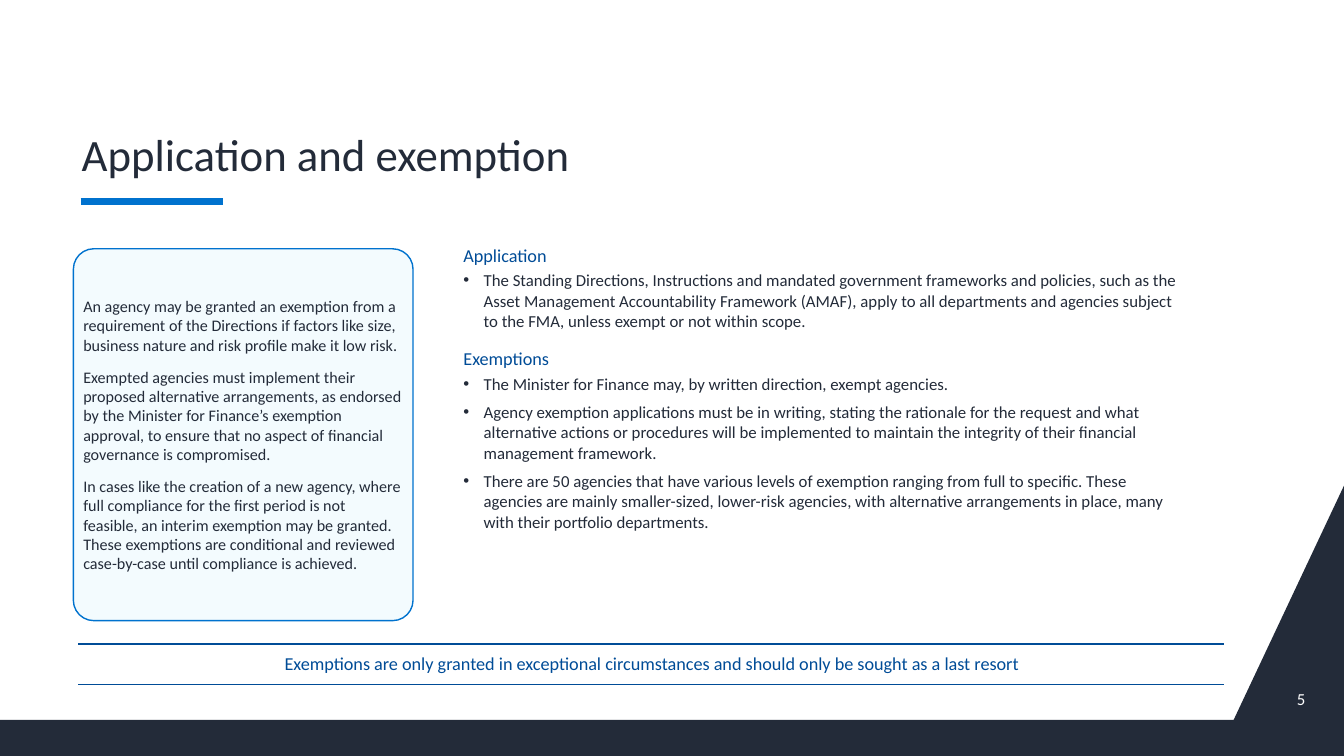
import pptx
import pptx.util
import pptx.dml.color
import pptx.enum.shapes
import pptx.enum.text
import pptx.oxml
import pptx.oxml.ns
from dataclasses import dataclass

Cm, Pt = pptx.util.Cm, pptx.util.Pt
ALIGN = pptx.enum.text.PP_ALIGN
ANCHOR = pptx.enum.text.MSO_ANCHOR

TITLE = "Application and exemption"
CARD = [
    "An agency may be granted an exemption from a requirement of the Directions if factors like size, "
    "business nature and risk profile make it low risk.",
    "Exempted agencies must implement their proposed alternative arrangements, as endorsed by the Minister "
    "for Finance’s exemption approval, to ensure that no aspect of financial governance is compromised.",
    "In cases like the creation of a new agency, where full compliance for the first period is not feasible, "
    "an interim exemption may be granted. These exemptions are conditional and reviewed case-by-case until "
    "compliance is achieved.",
]
SECTIONS = {
    "Application": [
        "The Standing Directions, Instructions and mandated government frameworks and policies, such as the "
        "Asset Management Accountability Framework (AMAF), apply to all departments and agencies subject to "
        "the FMA, unless exempt or not within scope.",
    ],
    "Exemptions": [
        "The Minister for Finance may, by written direction, exempt agencies.",
        "Agency exemption applications must be in writing, stating the rationale for the request and what "
        "alternative actions or procedures will be implemented to maintain the integrity of their financial "
        "management framework.",
        "There are 50 agencies that have various levels of exemption ranging from full to specific. These "
        "agencies are mainly smaller-sized, lower-risk agencies, with alternative arrangements in place, many "
        "with their portfolio departments.",
    ],
}
BANNER = "Exemptions are only granted in exceptional circumstances and should only be sought as a last resort"
PAGE_NUMBER = "5"

# Left, top, width, height in centimetres
TITLE_AT = (1.96, 1.83, 29.21, 2.87)
CARD_AT = (1.85, 6.27, 8.56, 9.37)
BODY_AT = (11.58, 6.02, 18.19, 11.12)
BANNER_AT = (1.96, 16.23, 28.91, 1.02)
NUMBER_AT = (31.93, 17.09, 1.22, 1.02)
RULE = (2.03, 5.08, 5.61, 5.08)
FOOTER = [(31.09, 18.14), (0, 18.14), (0, 19.05), (33.87, 19.05), (33.87, 12.24)]
HANG = 0.51


@dataclass(frozen=True)
class Theme:
    font: str = "Calibri"
    ink: str = "232B39"
    navy: str = "004C97"
    blue: str = "0072CE"
    pale: str = "F3FBFE"
    white: str = "FFFFFF"
    title: float = 32
    heading: float = 13
    body: float = 12
    card: float = 11.5


THEME = Theme()


def rgb(value):
    return pptx.dml.color.RGBColor.from_string(value)


def lengths(values):
    return [Cm(value) for value in values]


def paint(target, color):
    target.fill.solid()
    target.fill.fore_color.rgb = rgb(color)


def write(para, text, size, color, align=ALIGN.LEFT, before=0, after=0):
    para.text = text
    para.alignment = align
    para.space_before, para.space_after = Pt(before), Pt(after)
    font = para.runs[0].font
    font.name, font.size, font.color.rgb = THEME.font, Pt(size), rgb(color)


def paragraphs(frame):
    """Yield the first paragraph of a text frame, then new ones."""
    yield frame.paragraphs[0]
    while True:
        yield frame.add_paragraph()


def set_frame(frame, anchor, side=0.1, end=0.13):
    frame.word_wrap = True
    frame.vertical_anchor = anchor
    frame.margin_left = frame.margin_right = Cm(side)
    frame.margin_top = frame.margin_bottom = Cm(end)
    return frame


def add_text_box(page, place, anchor, side=0.1):
    return set_frame(page.shapes.add_textbox(*lengths(place)).text_frame, anchor, side)


def add_bullet(para):
    props = para._p.get_or_add_pPr()
    props.set("marL", str(Cm(HANG)))
    props.set("indent", str(-Cm(HANG)))
    space = pptx.oxml.ns.nsdecls("a")
    for xml in (f'<a:buClr {space}><a:srgbClr val="{THEME.ink}"/></a:buClr>',
                f'<a:buFont {space} typeface="Arial"/>',
                f'<a:buChar {space} char="•"/>'):
        props.append(pptx.oxml.parse_xml(xml))


def add_footer(page):
    builder = page.shapes.build_freeform(*lengths(FOOTER[0]))
    builder.add_line_segments([lengths(point) for point in FOOTER[1:]], close=True)
    footer = builder.convert_to_shape()
    footer.shadow.inherit = False
    paint(footer, THEME.ink)
    footer.line.fill.background()


def add_title(page):
    frame = add_text_box(page, TITLE_AT, ANCHOR.BOTTOM)
    write(frame.paragraphs[0], TITLE, THEME.title, THEME.ink)
    frame.paragraphs[0].line_spacing = 0.9
    rule = page.shapes.add_connector(pptx.enum.shapes.MSO_CONNECTOR.STRAIGHT, *lengths(RULE))
    rule.line.color.rgb, rule.line.width = rgb(THEME.blue), Pt(4.5)
    rule._element.spPr.append(pptx.oxml.parse_xml(f'<a:effectLst {pptx.oxml.ns.nsdecls("a")}/>'))


def add_card(page):
    card = page.shapes.add_shape(pptx.enum.shapes.MSO_SHAPE.ROUNDED_RECTANGLE, *lengths(CARD_AT))
    card.adjustments[0] = 0.06
    card.shadow.inherit = False
    paint(card, THEME.pale)
    card.line.color.rgb, card.line.width = rgb(THEME.blue), Pt(1)
    frame = set_frame(card.text_frame, ANCHOR.MIDDLE)
    for text, para in zip(CARD, paragraphs(frame)):
        write(para, text, THEME.card, THEME.ink, before=6, after=3)


def add_body(page):
    paras = paragraphs(add_text_box(page, BODY_AT, ANCHOR.TOP))
    for index, (heading, points) in enumerate(SECTIONS.items()):
        write(next(paras), heading, THEME.heading, THEME.navy, before=9 if index else 0)
        for point in points:
            para = next(paras)
            write(para, point, THEME.body, THEME.ink, before=3, after=3)
            add_bullet(para)


def add_banner(page):
    table = page.shapes.add_table(1, 1, *lengths(BANNER_AT)).table
    table.first_row = table.horz_banding = False
    cell = table.cell(0, 0)
    paint(cell, THEME.white)
    cell.vertical_anchor = ANCHOR.MIDDLE
    write(cell.text_frame.paragraphs[0], BANNER, THEME.heading, THEME.navy, ALIGN.CENTER)
    sides = [("L", THEME.white, 1), ("R", THEME.white, 1), ("T", THEME.navy, 1.5), ("B", THEME.navy, 1.5)]
    for index, (side, color, width) in enumerate(sides):
        cell._tc.get_or_add_tcPr().insert(index, pptx.oxml.parse_xml(
            f'<a:ln{side} {pptx.oxml.ns.nsdecls("a")} w="{Pt(width)}">'
            f'<a:solidFill><a:srgbClr val="{color}"/></a:solidFill></a:ln{side}>'))


def add_page_number(page):
    frame = add_text_box(page, NUMBER_AT, ANCHOR.MIDDLE, side=0.25)
    write(frame.paragraphs[0], PAGE_NUMBER, THEME.body, THEME.white, ALIGN.RIGHT)


def main():
    deck = pptx.Presentation()
    deck.slide_width, deck.slide_height = Cm(33.87), Cm(19.05)
    page = deck.slides.add_slide(deck.slide_layouts[6])
    for add_part in (add_footer, add_title, add_body, add_page_number, add_card, add_banner):
        add_part(page)
    deck.save("out.pptx")


if __name__ == "__main__":
    main()
